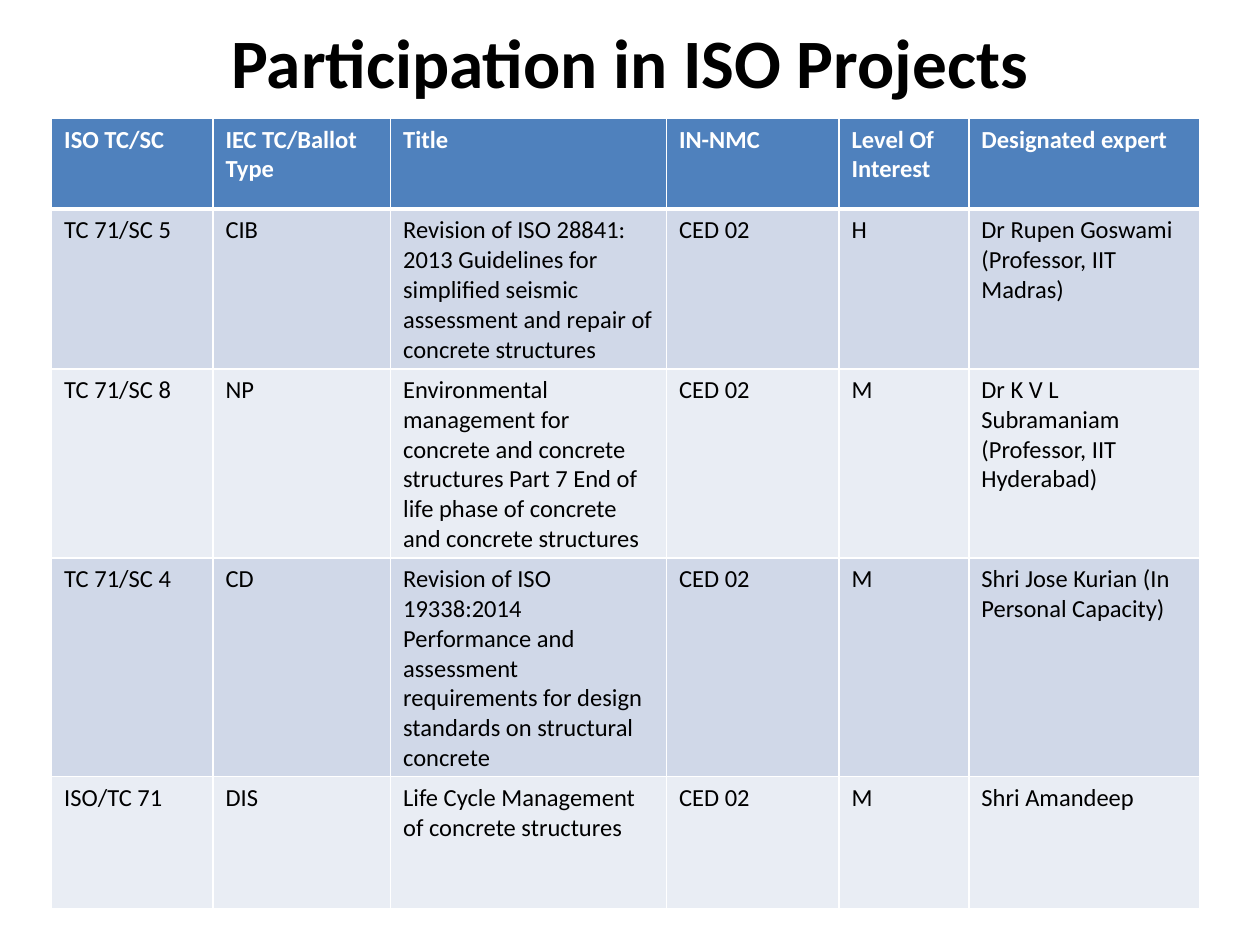
from pptx import Presentation
from pptx.dml.color import RGBColor
from pptx.enum.text import MSO_ANCHOR, PP_ALIGN
from pptx.oxml.ns import qn
from pptx.util import Inches, Pt
from lxml import etree

CENTER, LEFT = PP_ALIGN.CENTER, PP_ALIGN.LEFT
MIDDLE = MSO_ANCHOR.MIDDLE

COLUMN_WIDTHS = [1.28, 1.41, 2.19, 1.37, 1.03, 1.83]
ROW_HEIGHTS = [0.72, 1.14, 1.36, 1.57, 1.05]
ROWS = [
    ["ISO TC/SC", "IEC TC/Ballot Type", "Title", "IN-NMC",
     "Level Of Interest", "Designated expert"],
    ["TC 71/SC 5", "CIB",
     "Revision of ISO 28841: 2013 Guidelines for simplified seismic "
     "assessment and repair of concrete structures",
     "CED 02", "H", "Dr Rupen Goswami (Professor, IIT Madras)"],
    ["TC 71/SC 8", "NP",
     "Environmental management for concrete and concrete structures "
     "Part 7 End of life phase of concrete and concrete structures",
     "CED 02", "M", "Dr K V L Subramaniam (Professor, IIT Hyderabad)"],
    ["TC 71/SC 4", "CD",
     "Revision of ISO 19338:2014 Performance and assessment requirements "
     "for design standards on structural concrete",
     "CED 02", "M", "Shri Jose Kurian (In Personal Capacity)"],
    ["ISO/TC 71", "DIS", "Life Cycle Management of concrete structures",
     "CED 02", "M", "Shri Amandeep"],
]


def color(value):
    return RGBColor.from_string(value)


class SlideBuilder:
    font_name = "Calibri"
    black, white = "000000", "FFFFFF"
    header_fill = "4F81BD"
    band_fills = ["D0D8E8", "E9EDF4"]

    def __init__(self, slide):
        self.slide = slide

    def add_text(self, text_frame, text, size, text_color, bold, alignment):
        paragraph = text_frame.paragraphs[0]
        paragraph.alignment = alignment
        run = paragraph.add_run()
        run.text = text
        style = {"name": self.font_name, "size": Pt(size), "bold": bold}
        for name, value in style.items():
            setattr(run.font, name, value)
        run.font.color.rgb = color(text_color)

    def title(self, text, left, top, width, height):
        box = self.slide.shapes.add_textbox(
            Inches(left), Inches(top), Inches(width), Inches(height))
        frame_format = {"word_wrap": True, "vertical_anchor": MIDDLE}
        for name, value in frame_format.items():
            setattr(box.text_frame, name, value)
        self.add_text(box.text_frame, text, 39.6, self.black, True, CENTER)

    def borders(self, cell, bottom_width, top_width):
        properties = cell._tc.get_or_add_tcPr()
        widths = {"a:lnL": 1, "a:lnR": 1, "a:lnT": top_width, "a:lnB": bottom_width}
        for tag, width in widths.items():
            line = etree.SubElement(properties, qn(tag), w=str(Pt(width)))
            fill = etree.SubElement(line, qn("a:solidFill"))
            etree.SubElement(fill, qn("a:srgbClr"), val=self.white)

    def table(self, rows, left, top, column_widths, row_heights):
        table = self.slide.shapes.add_table(
            len(rows), len(column_widths), Inches(left), Inches(top),
            Inches(sum(column_widths)), Inches(sum(row_heights))).table
        for column, width in zip(table.columns, column_widths):
            column.width = Inches(width)
        for index, (row, height, texts) in enumerate(
                zip(table.rows, row_heights, rows)):
            row.height = Inches(height)
            header = index == 0
            fill = self.header_fill if header else self.band_fills[(index - 1) % 2]
            text_color = self.white if header else self.black
            for cell, text in zip(row.cells, texts):
                self.borders(cell, 3 if header else 1, 3 if index == 1 else 1)
                cell.fill.solid()
                cell.fill.fore_color.rgb = color(fill)
                self.add_text(cell.text_frame, text, 14, text_color, header, LEFT)


def main():
    presentation = Presentation()
    presentation.slide_width = Inches(10)
    presentation.slide_height = Inches(7.5)
    slide = presentation.slides.add_slide(presentation.slide_layouts[6])
    builder = SlideBuilder(slide)
    builder.title("Participation in ISO Projects", 0.5, 0.21, 9, 0.54)
    builder.table(ROWS, 0.41, 0.94, COLUMN_WIDTHS, ROW_HEIGHTS)
    presentation.save("out.pptx")


if __name__ == "__main__":
    main()
